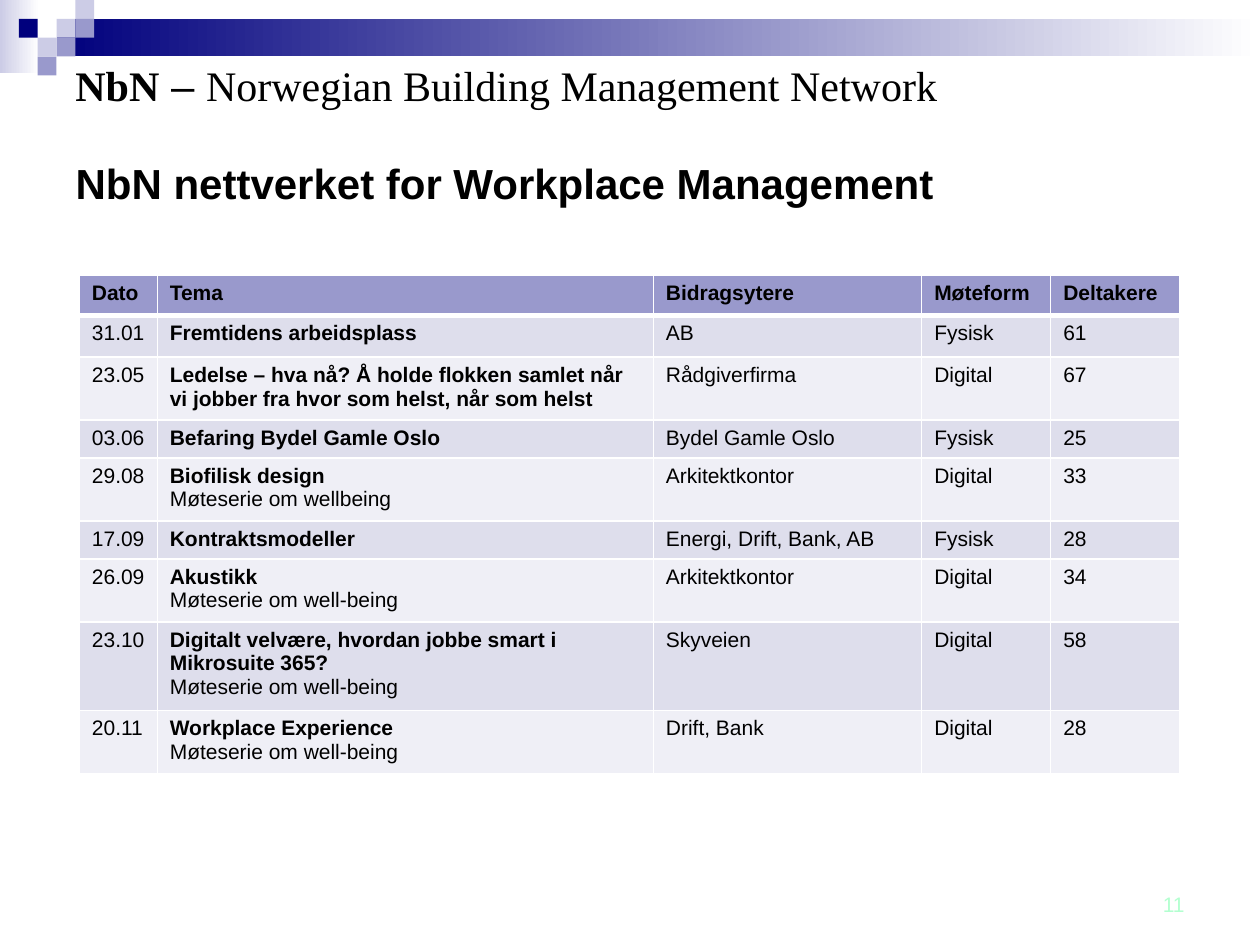
"""Builds the slide with the network's meeting programme."""
from lxml.etree import SubElement as Sub
from pptx import Presentation as Deck
from pptx.dml.color import RGBColor as Rgb
from pptx.enum.shapes import MSO_SHAPE as Kind
from pptx.enum.text import MSO_ANCHOR as Anchor, PP_ALIGN as Align
from pptx.oxml.ns import qn
from pptx.util import Cm, Pt

HUES = {"navy": "00007D", "mid": "9999CC", "pale": "CCCCE6", "white": "FFFFFF",
        "black": "000000", "odd": "DEDEEC", "even": "EFEFF6", "mint": "B3FFD0"}
UNIT = 0.38
TILES = [(3, 1, "pale"), (4, 0, "pale"), (4, 1, "mid"), (2, 2, "pale"),
         (1, 1, "navy"), (3, 2, "mid"), (2, 3, "mid")]
WIDTHS = [1.57, 10, 5.41, 2.6, 2.6]
HEIGHTS = [0.82, 0.84, 1.2, 0.73, 1.2, 0.73, 1.2, 1.67, 1.2]
SERIES = "Møteserie om well-being"
HEAD = ["Dato", "Tema", "Bidragsytere", "Møteform", "Deltakere"]
ROWS = [
    ["31.01", "Fremtidens arbeidsplass", "AB", "Fysisk", "61"],
    ["23.05", "Ledelse – hva nå? Å holde flokken samlet når vi jobber fra hvor "
     "som helst, når som helst", "Rådgiverfirma", "Digital", "67"],
    ["03.06", "Befaring Bydel Gamle Oslo", "Bydel Gamle Oslo", "Fysisk", "25"],
    ["29.08", "Biofilisk design\nMøteserie om wellbeing", "Arkitektkontor", "Digital", "33"],
    ["17.09", "Kontraktsmodeller", "Energi, Drift, Bank, AB", "Fysisk", "28"],
    ["26.09", f"Akustikk\n{SERIES}", "Arkitektkontor", "Digital", "34"],
    ["23.10", f"Digitalt velvære, hvordan jobbe smart i Mikrosuite 365?\n{SERIES}",
     "Skyveien", "Digital", "58"],
    ["20.11", f"Workplace Experience\n{SERIES}", "Drift, Bank", "Digital", "28"],
]


class Page:
    """Holds the style and the current slide."""

    def __init__(self, slide, face="Arial"):
        self.slide, self.face = slide, face

    def hue(self, name):
        return Rgb.from_string(HUES[name])

    def style(self, font, size, bold=False, hue="black", face=None):
        font.name, font.size, font.bold = face or self.face, Pt(size), bold
        font.color.rgb = self.hue(hue)

    def block(self, x, y, w, h, *hues):
        box = self.slide.shapes.add_shape(Kind.RECTANGLE, Cm(x), Cm(y), Cm(w), Cm(h))
        box.shadow.inherit = False
        box.line.fill.background()
        if len(hues) == 1:
            box.fill.solid()
            box.fill.fore_color.rgb = self.hue(hues[0])
        else:
            box.fill.gradient()
            box.fill.gradient_angle = 0
            for stop, name in zip(box.fill.gradient_stops, hues):
                stop.color.rgb = self.hue(name)

    def text(self, x, y, w, h):
        box = self.slide.shapes.add_textbox(Cm(x), Cm(y), Cm(w), Cm(h))
        box.text_frame.word_wrap = True
        return box.text_frame.paragraphs[0]

    def banner(self, x, y, w, h, parts):
        line = self.text(x, y, w, h)
        for words, face, bold in parts:
            run = line.add_run()
            run.text = words
            self.style(run.font, 24, bold, face=face)

    def number(self, x, y, w, h, words):
        line = self.text(x, y, w, h)
        line.text, line.alignment = words, Align.RIGHT
        self.style(line.font, 12, hue="mint")

    def title(self, x, y, w, h, words):
        box = self.slide.shapes.title
        box.left, box.top, box.width, box.height = Cm(x), Cm(y), Cm(w), Cm(h)
        box.text_frame.text = words
        box.text_frame.vertical_anchor = Anchor.MIDDLE
        line = box.text_frame.paragraphs[0]
        line.alignment = Align.LEFT
        self.style(line.font, 24, True)

    def edge(self, cell, side, width):
        line = Sub(cell._tc.get_or_add_tcPr(), qn(f"a:ln{side}"), w=str(Pt(width)))
        Sub(Sub(line, qn("a:solidFill")), qn("a:srgbClr"), val=HUES["white"])

    def cell(self, cell, words, row, col):
        for side in "LRTB":
            thick = (row, side) in [(0, "B"), (1, "T")]
            self.edge(cell, side, 3 if thick else 1)
        cell.fill.solid()
        cell.fill.fore_color.rgb = self.hue(("odd" if row % 2 else "even") if row else "mid")
        cell.text = words
        for i, line in enumerate(cell.text_frame.paragraphs):
            self.style(line.font, 12, row == 0 or (col == 1 and i == 0))

    def table(self, x, y, rows, widths, heights):
        grid = self.slide.shapes.add_table(len(rows), len(widths), Cm(x), Cm(y),
                                           Cm(sum(widths)), Cm(sum(heights))).table
        for col, wide in zip(grid.columns, widths):
            col.width = Cm(wide)
        for r, words in enumerate(rows):
            grid.rows[r].height = Cm(heights[r])
            for c, word in enumerate(words):
                self.cell(grid.cell(r, c), word, r, c)


def main():
    deck = Deck()
    deck.slide_width, deck.slide_height = Cm(25.4), Cm(19.05)
    page = Page(deck.slides.add_slide(deck.slide_layouts[5]))
    page.block(0, 0, 0.79, 1.47, "pale", "white")
    page.block(3 * UNIT, UNIT, 25.4 - 3 * UNIT, 2 * UNIT, "navy", "white")
    for col, row, name in TILES:
        page.block(col * UNIT, row * UNIT, UNIT, UNIT, name)
    serif = "Times New Roman"
    page.banner(1.27, 1.07, 23.7, 2.31, [
        ("NbN", serif, True), (" – ", "Arial", False),
        ("Norwegian Building Management Network", serif, False)])
    page.title(1.27, 3.05, 22.86, 1.27, "NbN nettverket for Workplace Management")
    page.table(1.6, 5.54, [HEAD] + ROWS, WIDTHS, HEIGHTS)
    page.number(18.2, 17.85, 5.93, 0.8, "11")
    deck.save("out.pptx")


if __name__ == "__main__":
    main()
